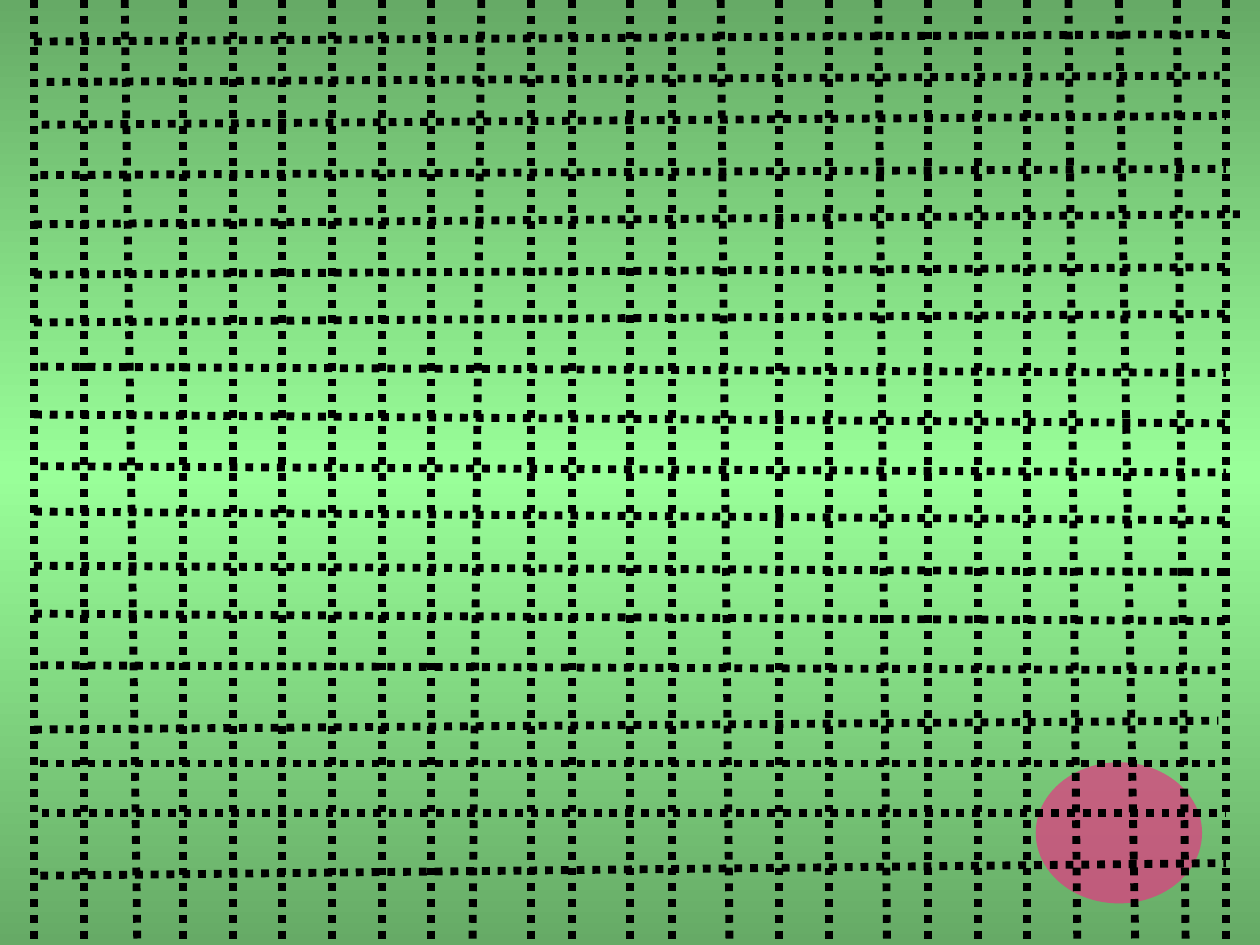
from copy import deepcopy

from lxml.etree import SubElement
from pptx import Presentation
from pptx.dml.color import RGBColor as Rgb
from pptx.enum.dml import MSO_LINE as Dash
from pptx.enum.shapes import MSO_CONNECTOR as Link, MSO_SHAPE as Form
from pptx.oxml.ns import qn
from pptx.util import Inches, Pt

WIDE, HIGH = 10, 7.5
LEFT, RIGHT, COLS = 0.27, 9.73, 24
HUES = {"edge": "66AA66", "mid": "99FF99", "dot": "E03C82", "line": "000000"}

SKEWED = {
    2: (0.99, 1.09), 9: (3.82, 3.75), 11: (4.54, 4.54), 13: (5.33, 5.33),
    14: (5.72, 5.79), 17: (6.97, 7.04), 21: (8.48, 8.55),
    22: (8.88, 9.01), 23: (9.34, 9.41),
}
ROWS = [
    (0.27, 0.33, 9.73, 0.27), (0.37, 0.65, 9.68, 0.6),
    (0.33, 0.99, 9.73, 0.92), (0.32, 1.39, 9.73, 1.34),
    (0.27, 1.78, 9.84, 1.7), (0.27, 2.18, 9.77, 2.12),
    (0.27, 2.56, 9.74, 2.49), (0.32, 2.91, 9.73, 2.96),
    (0.27, 3.29, 9.73, 3.36), (0.32, 3.7, 9.73, 3.75),
    (0.27, 4.06, 9.74, 4.13), (0.27, 4.49, 9.73, 4.54),
    (0.27, 4.87, 9.73, 4.93), (0.32, 5.28, 9.68, 5.32),
    (0.27, 5.79, 9.67, 5.72), (0.32, 6.06, 9.68, 6.06),
    (0.33, 6.45, 9.73, 6.45), (0.32, 6.95, 9.73, 6.85),
]


def hue(name):
    return Rgb.from_string(HUES[name])


def paint_back(slide):
    fill = slide.background.fill
    fill.gradient()
    fill.gradient_angle = 90
    stops = slide.background._cSld.find(".//" + qn("a:gsLst"))
    stops.append(deepcopy(stops[0]))
    for stop, name, place in zip(fill.gradient_stops, ("edge", "mid", "edge"), (0, 0.5, 1)):
        stop.color.rgb = hue(name)
        stop.position = place


def add_dot(slide, *box):
    dot = slide.shapes.add_shape(Form.OVAL, *map(Inches, box))
    dot.shadow.inherit = False
    dot.fill.solid()
    dot.fill.fore_color.rgb = hue("dot")
    dot.line.fill.background()
    color = dot._element.spPr.find(".//" + qn("a:srgbClr"))
    SubElement(color, qn("a:alpha"), val="73000")


def add_line(slide, *ends):
    line = slide.shapes.add_connector(Link.STRAIGHT, *map(Inches, ends))
    line.line.color.rgb = hue("line")
    line.line.width = Pt(4.5)
    line.line.dash_style = Dash.ROUND_DOT
    SubElement(line._element.spPr, qn("a:effectLst"))


def add_grid(slide):
    for row in ROWS:
        add_line(slide, *row)
    step = (RIGHT - LEFT) / COLS
    for col in range(COLS + 1):
        even = LEFT + col * step
        top, foot = SKEWED.get(col, (even, even))
        add_line(slide, top, 0, foot, HIGH)


def main():
    deck = Presentation()
    deck.slide_width, deck.slide_height = Inches(WIDE), Inches(HIGH)
    slide = deck.slides.add_slide(deck.slide_layouts[6])
    paint_back(slide)
    add_dot(slide, 8.22, 6.05, 1.32, 1.12)
    add_grid(slide)
    deck.save("out.pptx")


if __name__ == "__main__":
    main()
